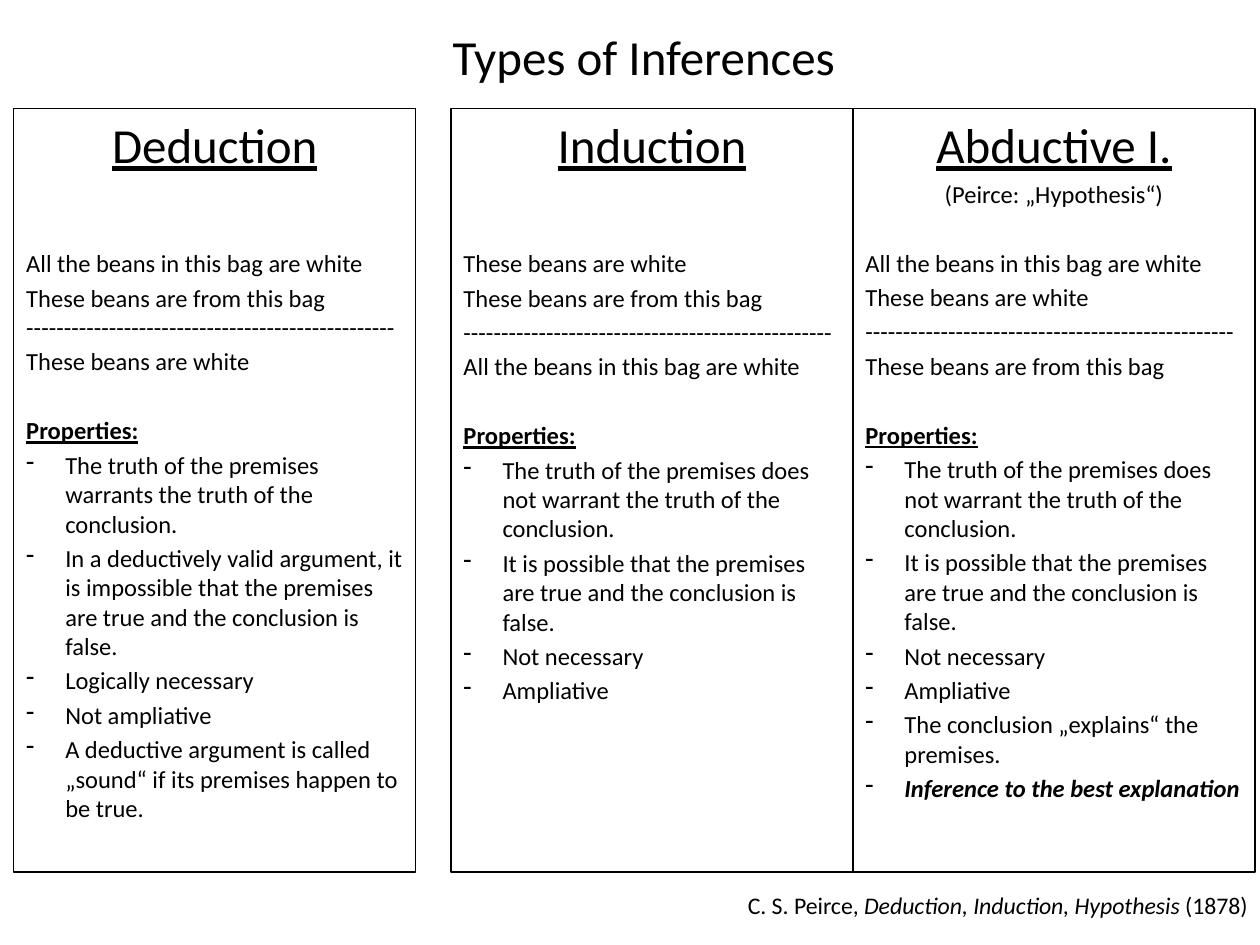
from dataclasses import dataclass

from lxml import etree
from pptx import Presentation
from pptx.dml.color import RGBColor
from pptx.enum.shapes import MSO_SHAPE
from pptx.enum.text import MSO_ANCHOR, PP_ALIGN
from pptx.oxml.ns import qn
from pptx.util import Inches, Pt

RECTANGLE = MSO_SHAPE.RECTANGLE
TOP = MSO_ANCHOR.TOP
LEFT, CENTER, RIGHT = PP_ALIGN.LEFT, PP_ALIGN.CENTER, PP_ALIGN.RIGHT


@dataclass(frozen=True)
class Theme:
    font: str = "Calibri"
    ink: RGBColor = RGBColor(0, 0, 0)
    heading: float = 28
    body: float = 14
    source: float = 13.6
    border: float = 0.75
    gap: float = 2.8
    blank_line: float = 19.9
    indent: float = 0.31


class SlideWriter:
    def __init__(self, deck, theme):
        self.deck = deck
        self.theme = theme
        self.page = deck.slides.add_slide(deck.slide_layouts[6])

    def area(self, left, top, width, height):
        across, down = self.deck.slide_width, self.deck.slide_height
        return [round(share * side) for share, side in
                zip((left, top, width, height), (across, down, across, down))]

    def span(self, para, text, size, bold=False, italic=False, underline=False):
        span = para.add_run()
        span.text = text
        font = span.font
        font.name, font.size = self.theme.font, Pt(size)
        font.bold, font.italic, font.underline = bold, italic, underline
        font.color.rgb = self.theme.ink

    def para(self, frame, align=LEFT, blank_lines=0):
        para = frame.paragraphs[0]
        if para.runs:
            para = frame.add_paragraph()
        para.alignment = align
        para.space_before = Pt(self.theme.gap + blank_lines * self.theme.blank_line)
        return para

    def dash_item(self, frame, text, **emphasis):
        para = self.para(frame)
        properties = para._p.get_or_add_pPr()
        properties.set("marL", str(Inches(self.theme.indent)))
        properties.set("indent", str(-Inches(self.theme.indent)))
        etree.SubElement(properties, qn("a:buChar"), char="-")
        self.span(para, text, self.theme.body, **emphasis)

    def label(self, area, align, spans, size, wrap=True):
        frame = self.page.shapes.add_textbox(*self.area(*area)).text_frame
        frame.word_wrap = wrap
        para = self.para(frame, align)
        for text, italic in spans:
            self.span(para, text, size, italic=italic)

    def panel(self, area):
        box = self.page.shapes.add_shape(RECTANGLE, *self.area(*area))
        box.shadow.inherit = False
        box.fill.background()
        box.line.color.rgb = self.theme.ink
        box.line.width = Pt(self.theme.border)
        box.text_frame.word_wrap = True
        box.text_frame.vertical_anchor = TOP
        return box.text_frame

    def inference(self, area, name, note, argument, properties, highlight):
        body = self.theme.body
        frame = self.panel(area)
        self.span(self.para(frame, CENTER), name, self.theme.heading, underline=True)
        if note:
            self.span(self.para(frame, CENTER), note, body)
        blank_lines = 1 if note else 2
        for lines in argument:
            para = self.para(frame, blank_lines=blank_lines)
            blank_lines = 0
            for number, line in enumerate(lines):
                if number:
                    para.add_line_break()
                self.span(para, line, body)
        self.span(self.para(frame, blank_lines=1), "Properties:", body,
                  bold=True, underline=True)
        for text in properties:
            self.dash_item(frame, text)
        if highlight:
            self.dash_item(frame, highlight, bold=True, italic=True)


ALL_WHITE = "All the beans in this bag are white"
FROM_BAG = "These beans are from this bag"
WHITE = "These beans are white"
RULE = "-" * 49

UNCERTAIN = [
    "The truth of the premises does not warrant the truth of the conclusion.",
    "It is possible that the premises are true and the conclusion is false.",
    "Not necessary",
    "Ampliative",
]
CERTAIN = [
    "The truth of the premises warrants the truth of the conclusion.",
    "In a deductively valid argument, it is impossible that the premises are "
    "true and the conclusion is false.",
    "Logically necessary",
    "Not ampliative",
    "A deductive argument is called „sound“ if its premises happen to be true.",
]
INFERENCES = [
    (0.011, "Deduction", "", [[ALL_WHITE], [FROM_BAG, RULE], [WHITE]], CERTAIN, ""),
    (0.358, "Induction", "", [[WHITE], [FROM_BAG], [RULE], [ALL_WHITE]], UNCERTAIN, ""),
    (0.677, "Abductive I.", "(Peirce: „Hypothesis“)",
     [[ALL_WHITE], [WHITE], [RULE], [FROM_BAG]],
     UNCERTAIN + ["The conclusion „explains“ the premises."],
     "Inference to the best explanation"),
]


def main():
    deck = Presentation()
    deck.slide_width, deck.slide_height = Inches(10), Inches(7.5)
    theme = Theme()
    writer = SlideWriter(deck, theme)
    writer.label((0.346, 0.021, 0.33, 0.076), CENTER,
                 [("Types of Inferences", False)], theme.heading, wrap=False)
    for left, *content in INFERENCES:
        writer.inference((left, 0.115, 0.319, 0.808), *content)
    writer.label((0.546, 0.936, 0.454, 0.064), RIGHT,
                 [("C. S. Peirce, ", False),
                  ("Deduction, Induction, Hypothesis ", True),
                  ("(1878)", False)], theme.source)
    deck.save("out.pptx")


if __name__ == "__main__":
    main()
